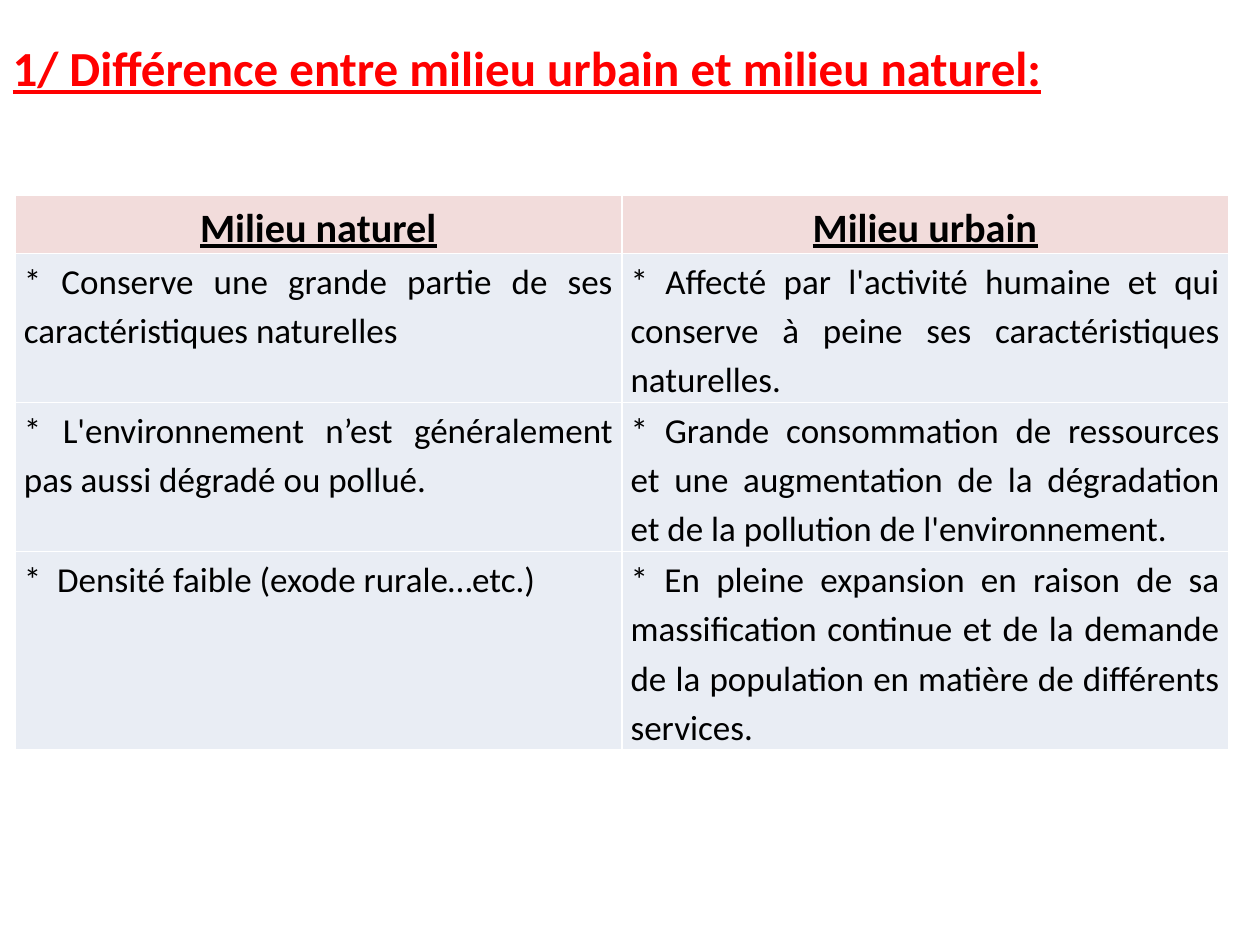
import pptx
import pptx.dml.color
import pptx.enum.text
import pptx.oxml
import pptx.oxml.ns
import pptx.util

Inches = pptx.util.Inches
Pt = pptx.util.Pt
ALIGN = pptx.enum.text.PP_ALIGN
ANCHOR = pptx.enum.text.MSO_ANCHOR


def rgb(color):
    return pptx.dml.color.RGBColor.from_string(color)


def write(tf, text, size, color="000000", bold=False, underline=False,
          align=ALIGN.LEFT, spacing=1.0, after=0, font="Calibri"):
    p = tf.paragraphs[0]
    p.alignment = align
    p.line_spacing = spacing
    p.space_before = Pt(0)
    p.space_after = Pt(after)
    r = p.add_run()
    r.text = text
    r.font.name = font
    r.font.size = Pt(size)
    r.font.bold = bold
    r.font.underline = underline
    r.font.color.rgb = rgb(color)


class Deck:
    title_color = "FF0000"
    header_fill = "F2DCDB"
    body_fill = "E9EDF4"
    border_color = "FFFFFF"

    def __init__(self, width, height):
        self.prs = pptx.Presentation()
        self.prs.slide_width = Inches(width)
        self.prs.slide_height = Inches(height)
        self.s = self.prs.slides.add_slide(self.prs.slide_layouts[5])

    def title(self, text, left, top, width, height):
        sp = self.s.shapes.title
        sp.left, sp.top = Inches(left), Inches(top)
        sp.width, sp.height = Inches(width), Inches(height)
        tf = sp.text_frame
        tf.word_wrap = True
        tf.auto_size = pptx.enum.text.MSO_AUTO_SIZE.NONE
        tf.vertical_anchor = ANCHOR.MIDDLE
        write(tf, text, 28, color=self.title_color, bold=True, underline=True)

    def borders(self, cell):
        tcPr = cell._tc.get_or_add_tcPr()
        for i, side in enumerate(("lnL", "lnR", "lnT", "lnB")):
            tcPr.insert(i, pptx.oxml.parse_xml(
                f'<a:{side} {pptx.oxml.ns.nsdecls("a")} w="{Pt(1)}"><a:solidFill>'
                f'<a:srgbClr val="{self.border_color}"/></a:solidFill></a:{side}>'))

    def cell(self, cell, text, header):
        cell.margin_left = cell.margin_right = Inches(0.07)
        cell.margin_top, cell.margin_bottom = Inches(0.01), 0
        cell.vertical_anchor = ANCHOR.TOP
        cell.fill.solid()
        cell.fill.fore_color.rgb = rgb(self.header_fill if header else self.body_fill)
        self.borders(cell)
        write(cell.text_frame, text, 23 if header else 20, bold=header, underline=header,
              align=ALIGN.CENTER if header else ALIGN.JUSTIFY, spacing=1.15, after=10)

    def table(self, rows, left, top, width, heights):
        table = self.s.shapes.add_table(
            len(rows), len(rows[0]), Inches(left), Inches(top),
            Inches(width), Inches(sum(heights))).table
        for i, (row, height) in enumerate(zip(rows, heights)):
            table.rows[i].height = Inches(height)
            for j, text in enumerate(row):
                self.cell(table.cell(i, j), text, header=i == 0)


def main():
    deck = Deck(10, 7.5)
    deck.title("1/ Différence entre milieu urbain et milieu naturel:", 0, 0.21, 9.25, 0.65)
    rows = [
        ("Milieu naturel", "Milieu urbain"),
        ("* Conserve une grande partie de ses caractéristiques naturelles",
         "* Affecté par l'activité humaine et qui conserve à peine ses "
         "caractéristiques naturelles."),
        ("* L'environnement n’est généralement pas aussi dégradé ou pollué.",
         "* Grande consommation de ressources et une augmentation de la dégradation "
         "et de la pollution de l'environnement."),
        ("*  Densité faible (exode rurale…etc.)",
         "* En pleine expansion en raison de sa massification continue et de la demande "
         "de la population en matière de différents services."),
    ]
    deck.table(rows, 0.12, 1.55, 9.63, (0.43, 1.11, 1.12, 1.48))
    deck.prs.save("out.pptx")


if __name__ == "__main__":
    main()
